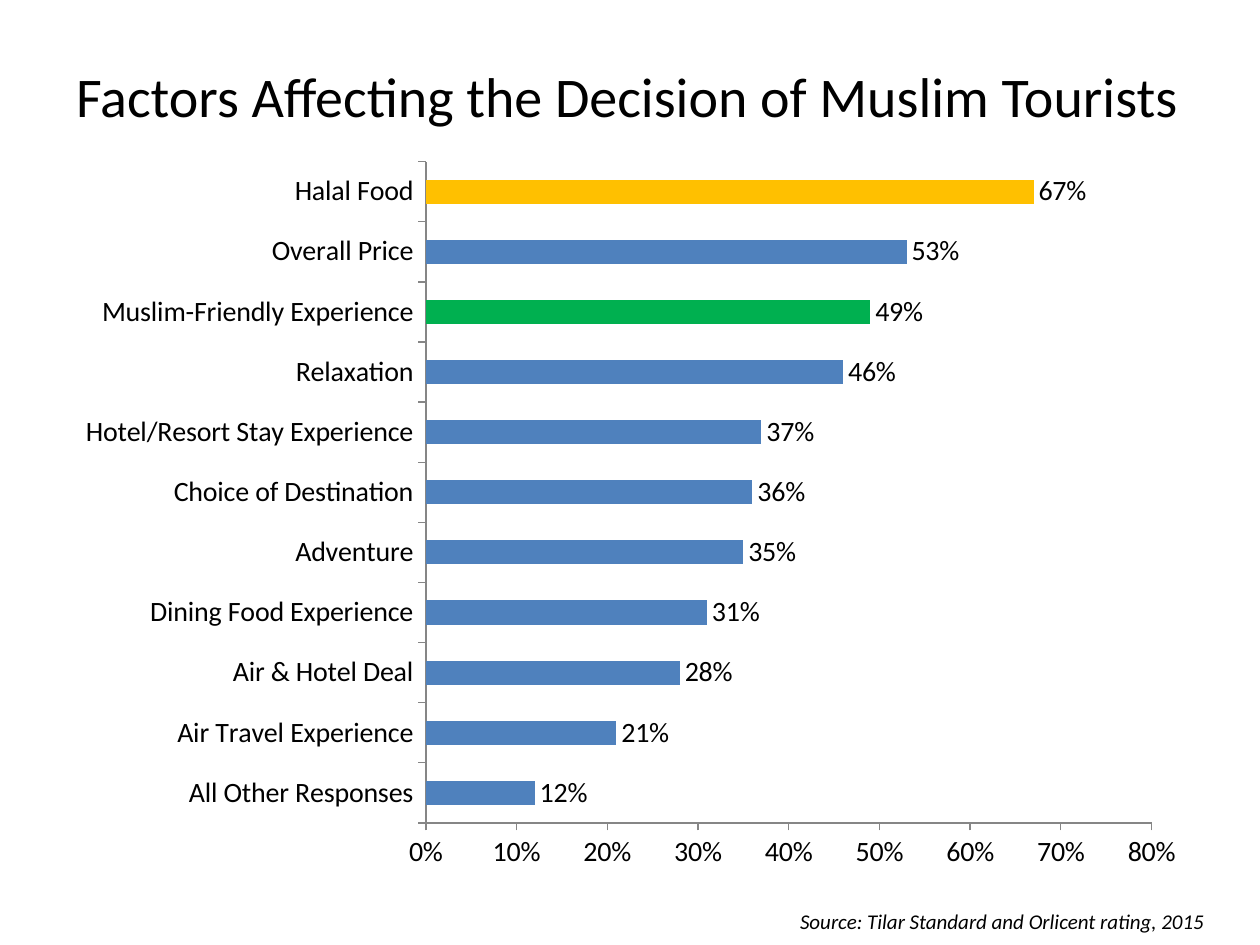
import dataclasses

import pptx
import pptx.chart.data
import pptx.dml.color
import pptx.enum.chart
import pptx.enum.text
import pptx.oxml
import pptx.oxml.ns
import pptx.util

EMU_PER_PX = 914400 // 126
SLIDE_BOX = (0, 0, 1260, 945)
TITLE_BOX = (35, 42, 1197, 157)
CHART_BOX = (63, 147, 1134, 735)
SOURCE_BOX = (787, 903, 449, 38)

# Factor, share of respondents, from the lowest bar to the highest
FACTORS = [
    ("All Other Responses", 0.12),
    ("Air Travel Experience", 0.21),
    ("Air & Hotel Deal", 0.28),
    ("Dining Food Experience", 0.31),
    ("Adventure", 0.35),
    ("Choice of Destination", 0.36),
    ("Hotel/Resort Stay Experience", 0.37),
    ("Relaxation", 0.46),
    ("Muslim-Friendly Experience", 0.49),
    ("Overall Price", 0.53),
    ("Halal Food", 0.67),
]


@dataclasses.dataclass(frozen=True)
class Theme:
    font: str = "Calibri"
    text: str = "000000"
    axis: str = "868686"
    bar: str = "4F81BD"
    friendly: str = "00B050"
    halal: str = "FFC000"
    title_size: int = 32
    chart_size: int = 16
    source_size: int = 12


THEME = Theme()
HIGHLIGHTS = {"Muslim-Friendly Experience": THEME.friendly, "Halal Food": THEME.halal}


def px(length):
    return pptx.util.Emu(length * EMU_PER_PX)


def rgb(color):
    return pptx.dml.color.RGBColor.from_string(color)


def format_font(font, size, italic=False):
    font.name = THEME.font
    font.size = pptx.util.Pt(size)
    font.color.rgb = rgb(THEME.text)
    font.italic = italic


def add_text(slide, box, text, size, italic=False, align="LEFT", anchor="TOP",
             margins=(13, 6, 13, 6)):
    shape = slide.shapes.add_textbox(*map(px, box))
    frame = shape.text_frame
    frame.word_wrap = True
    frame.vertical_anchor = getattr(pptx.enum.text.MSO_ANCHOR, anchor)
    (frame.margin_left, frame.margin_top,
     frame.margin_right, frame.margin_bottom) = map(px, margins)
    paragraph = frame.paragraphs[0]
    paragraph.alignment = getattr(pptx.enum.text.PP_ALIGN, align)
    run = paragraph.add_run()
    run.text = text
    format_font(run.font, size, italic)
    return shape


def add_title(slide, box):
    # The deep bottom margin lifts the line above the middle of the box
    add_text(slide, box, "Factors Affecting the Decision of Muslim Tourists",
             THEME.title_size, align="CENTER", anchor="MIDDLE", margins=(13, 6, 25, 56))


def set_plot_area(chart, left, top, width, height):
    """Fix the inner plot area, given as fractions of the chart."""
    plot_area = chart._chartSpace.chart.plotArea
    for layout in plot_area.findall(pptx.oxml.ns.qn("c:layout")):
        plot_area.remove(layout)
    plot_area.insert(0, pptx.oxml.parse_xml(
        f'<c:layout {pptx.oxml.ns.nsdecls("c")}><c:manualLayout>'
        '<c:layoutTarget val="inner"/><c:xMode val="edge"/><c:yMode val="edge"/>'
        f'<c:x val="{left}"/><c:y val="{top}"/><c:w val="{width}"/><c:h val="{height}"/>'
        '</c:manualLayout></c:layout>'))


def add_factor_chart(slide, box):
    data = pptx.chart.data.CategoryChartData(number_format="0%")
    data.categories = [name for name, share in FACTORS]
    data.add_series("Series 1", [share for name, share in FACTORS])
    chart = slide.shapes.add_chart(
        pptx.enum.chart.XL_CHART_TYPE.BAR_CLUSTERED, *map(px, box), data).chart
    chart.has_title = False
    chart.has_legend = False
    format_font(chart.font, THEME.chart_size)
    set_plot_area(chart, 0.32, 0.02, 0.64, 0.9)

    # Axes
    for axis in (chart.category_axis, chart.value_axis):
        axis.has_major_gridlines = False
        axis.major_tick_mark = pptx.enum.chart.XL_TICK_MARK.OUTSIDE
        axis.minor_tick_mark = pptx.enum.chart.XL_TICK_MARK.NONE
        axis.format.line.color.rgb = rgb(THEME.axis)
        axis.format.line.width = pptx.util.Pt(0.75)
    value_axis = chart.value_axis
    value_axis.minimum_scale = 0
    value_axis.maximum_scale = 0.8
    value_axis.major_unit = 0.1
    value_axis.tick_labels.number_format = "0%"
    value_axis.tick_labels.number_format_is_linked = False

    # Bars, two of them highlighted
    plot = chart.plots[0]
    plot.vary_by_categories = False
    plot.gap_width = 150
    series = plot.series[0]
    series.invert_if_negative = False
    series.format.fill.solid()
    series.format.fill.fore_color.rgb = rgb(THEME.bar)
    for index, (name, share) in enumerate(FACTORS):
        if name in HIGHLIGHTS:
            fill = series.points[index].format.fill
            fill.solid()
            fill.fore_color.rgb = rgb(HIGHLIGHTS[name])

    # Value labels
    labels = series.data_labels
    labels.show_value = True
    labels.number_format = "0%"
    labels.number_format_is_linked = False
    labels.position = pptx.enum.chart.XL_LABEL_POSITION.OUTSIDE_END
    format_font(labels.font, THEME.chart_size)


def add_source(slide, box):
    shape = add_text(slide, box, "Source: Tilar Standard and Orlicent rating, 2015",
                     THEME.source_size, italic=True)
    shape.text_frame.auto_size = pptx.enum.text.MSO_AUTO_SIZE.SHAPE_TO_FIT_TEXT


def main():
    presentation = pptx.Presentation()
    presentation.slide_width, presentation.slide_height = map(px, SLIDE_BOX[2:])
    slide = presentation.slides.add_slide(presentation.slide_layouts[6])
    add_title(slide, TITLE_BOX)
    add_factor_chart(slide, CHART_BOX)
    add_source(slide, SOURCE_BOX)
    presentation.save("out.pptx")


if __name__ == "__main__":
    main()
